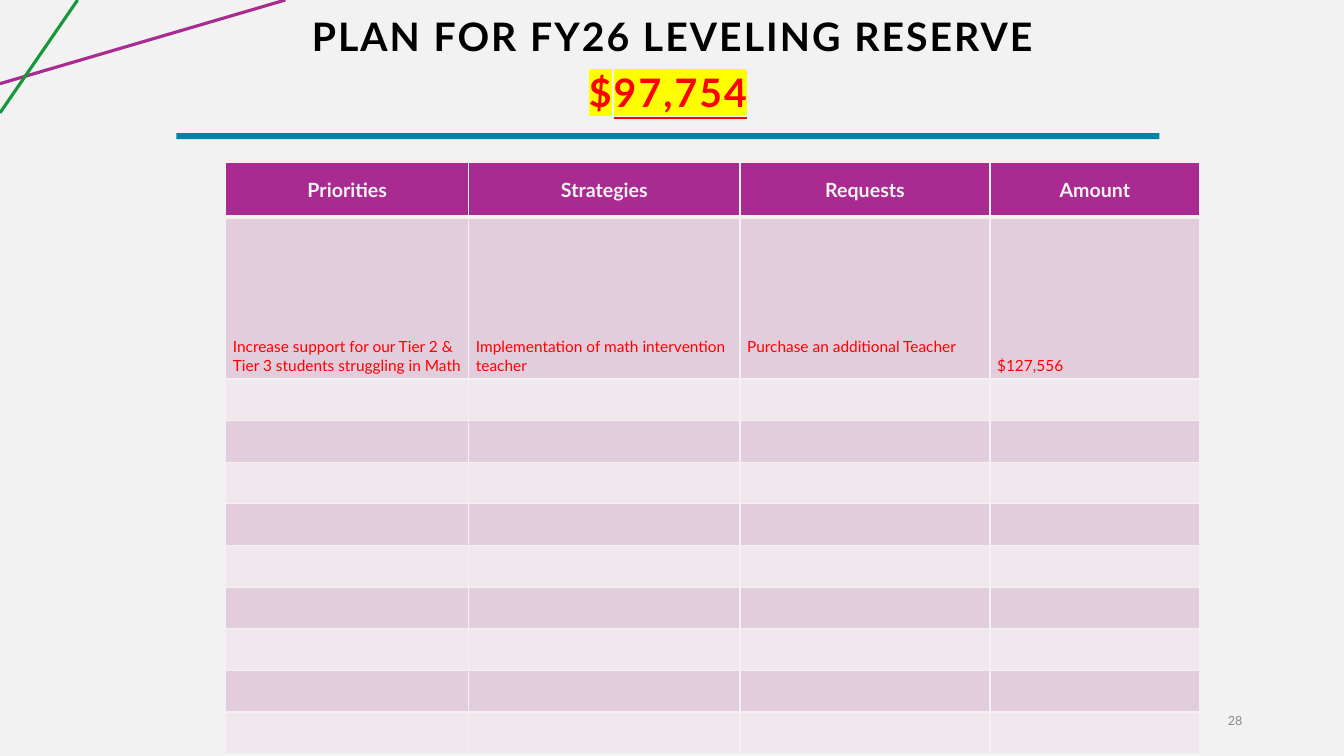
from lxml.etree import SubElement as Sub
from pptx import Presentation
from pptx.dml.color import RGBColor as Rgb
from pptx.enum.shapes import MSO_CONNECTOR as Link, MSO_SHAPE as Shape
from pptx.enum.text import MSO_ANCHOR as Anchor, PP_ALIGN as Align
from pptx.oxml.ns import qn
from pptx.util import Inches, Pt

COLORS = {
    "back": "F2F2F2", "plum": "A92A91", "green": "159839", "teal": "0083A9",
    "band": "E2CDDC", "pale": "F1E8EE", "black": "000000", "red": "FF0000",
    "gray": "8C8C8C", "yellow": "FFFF00",
}
HEADS = ["Priorities", "Strategies", "Requests", "Amount"]
PLAN = [
    "Increase support for our Tier 2 & Tier 3 students struggling in Math",
    "Implementation of math intervention teacher",
    "Purchase an additional Teacher",
    "$127,556",
]
WIDTHS = [2.41, 2.69, 2.48, 2.08]
EMPTY = 9
HEIGHTS = [0.54, 1.61] + [3.72 / EMPTY] * EMPTY


def color(name):
    return Rgb.from_string(COLORS[name])


def paint(fill, name):
    fill.solid()
    fill.fore_color.rgb = color(name)


def write(frame, text, size=11, tint="black", bold=False, align=Align.LEFT,
          space=0, mark=None, under=False, lead=None):
    para = frame.paragraphs[0]
    para.alignment = align
    if lead:
        para.line_spacing = lead
    run = para.add_run()
    run.text = text
    font = run.font
    font.size = Pt(size)
    font.bold = bold
    font.underline = under
    font.color.rgb = color(tint)
    props = run._r.get_or_add_rPr()
    if space:
        props.set("spc", str(int(space * 100)))
    if mark:
        glow = Sub(props, qn("a:highlight"))
        Sub(glow, qn("a:srgbClr")).set("val", COLORS[mark])
    font.name = "Lato"


def add_box(slide, left, top, width, height):
    box = slide.shapes.add_textbox(*map(Inches, (left, top, width, height)))
    frame = box.text_frame
    frame.word_wrap = True
    frame.vertical_anchor = Anchor.MIDDLE
    return frame


def add_line(slide, start, end, tint):
    line = slide.shapes.add_connector(Link.STRAIGHT, *map(Inches, start + end))
    line.line.color.rgb = color(tint)
    line.line.width = Pt(2.25)
    Sub(line._element.spPr, qn("a:effectLst"))


def add_bar(slide, left, top, width, height, tint):
    bar = slide.shapes.add_shape(Shape.RECTANGLE, *map(Inches, (left, top, width, height)))
    bar.shadow.inherit = False
    paint(bar.fill, tint)
    bar.line.fill.background()


def edge(cell, top, base):
    props = cell._tc.get_or_add_tcPr()
    for side, width in zip("LRTB", (1, 1, top, base)):
        line = Sub(props, qn("a:ln" + side))
        line.set("w", str(Pt(width)))
        fill = Sub(line, qn("a:solidFill"))
        Sub(fill, qn("a:srgbClr")).set("val", COLORS["back"])


def style(cell, row):
    edge(cell, 3 if row == 1 else 1, 3 if row == 0 else 1)
    paint(cell.fill, "plum" if row == 0 else "band" if row % 2 else "pale")
    cell.margin_left = cell.margin_right = Inches(0.07)
    cell.margin_top = cell.margin_bottom = Inches(0.04)
    cell.vertical_anchor = Anchor.BOTTOM if row else Anchor.MIDDLE


def add_plan(slide, left, top):
    size = map(Inches, (left, top, sum(WIDTHS), sum(HEIGHTS)))
    table = slide.shapes.add_table(len(HEIGHTS), len(WIDTHS), *size).table
    table.first_row = table.horz_banding = False
    for col, width in zip(table.columns, WIDTHS):
        col.width = Inches(width)
    for row, height in enumerate(HEIGHTS):
        table.rows[row].height = Inches(height)
        for cell in table.rows[row].cells:
            style(cell, row)
    for col, (head, item) in enumerate(zip(HEADS, PLAN)):
        write(table.cell(0, col).text_frame, head, size=14, tint="back",
              bold=True, align=Align.CENTER)
        write(table.cell(1, col).text_frame, item, tint="red")
    table.cell(1, HEADS.index("Requests")).margin_bottom = Inches(0.23)


def main():
    deck = Presentation()
    deck.slide_width, deck.slide_height = Inches(13.33), Inches(7.5)
    slide = deck.slides.add_slide(deck.slide_layouts[6])
    paint(slide.background.fill, "back")
    add_line(slide, (0, 0.83), (2.83, 0), "plum")
    add_line(slide, (0.77, 0), (0, 1.12), "green")
    write(add_box(slide, 11.34, 6.95, 1.08, 0.4), "28", size=9, tint="gray",
          align=Align.RIGHT)
    big = dict(size=28, bold=True, align=Align.CENTER, space=1.5, lead=0.9)
    write(add_box(slide, 0.92, 0.04, 11.5, 0.68),
          "PLAN FOR FY26 LEVELING RESERVE", **big)
    add_plan(slide, 2.24, 1.61)
    total = add_box(slide, 1.51, 0.48, 10.23, 0.92)
    for part, under in (("$", False), ("97,754", True)):
        write(total, part, tint="red", mark="yellow", under=under, **big)
    add_bar(slide, 1.75, 1.32, 9.75, 0.06, "teal")
    deck.save("out.pptx")


if __name__ == "__main__":
    main()
